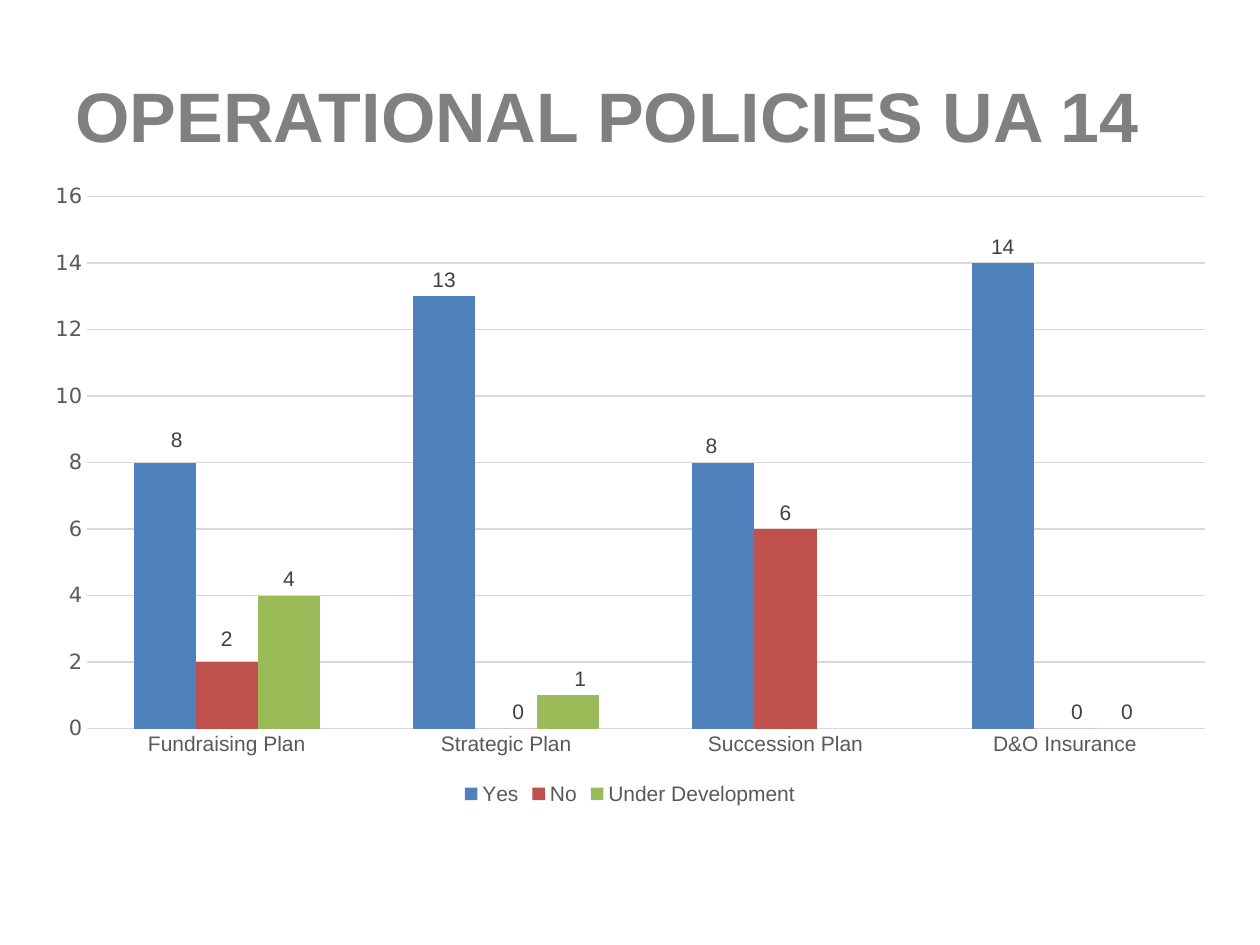
from dataclasses import dataclass

from lxml.etree import SubElement
from pptx import Presentation
from pptx.chart.data import CategoryChartData
from pptx.dml.color import RGBColor
from pptx.enum.chart import (XL_CHART_TYPE, XL_LABEL_POSITION,
                             XL_LEGEND_POSITION, XL_TICK_MARK)
from pptx.enum.text import MSO_ANCHOR, PP_ALIGN
from pptx.oxml.ns import qn
from pptx.util import Inches, Pt


@dataclass(frozen=True)
class Theme:
    face: str = "Arial"
    digits: str = "DejaVu Sans"
    head: str = "808080"
    axis: str = "595959"
    label: str = "404040"
    grid: str = "D9D9D9"
    bars: tuple = ("4F81BD", "C0504D", "9BBB59")
    big: int = 40
    small: int = 12


THEME = Theme()
PLANS = ["Fundraising Plan", "Strategic Plan", "Succession Plan", "D&O Insurance"]
ANSWERS = {
    "Yes": [8, 13, 8, 14],
    "No": [2, 0, 6, 0],
    "Under Development": [4, 1, None, 0],
}
# Label shifts as shares of the chart: (series, point) -> (x, y)
SHIFTS = {
    (0, 0): (0.01, -0.01), (0, 2): (-0.01, 0),
    (1, 0): (0, -0.01), (1, 1): (0.01, 0), (1, 3): (0.01, 0),
    (2, 1): (0.01, 0),
}


def style(font, size=THEME.small, color=THEME.axis, face=THEME.face, bold=False):
    font.size, font.name, font.bold = Pt(size), face, bold
    font.color.rgb = RGBColor.from_string(color)


def write(frame, text, align=PP_ALIGN.LEFT, anchor=MSO_ANCHOR.MIDDLE, **form):
    frame.word_wrap = True
    frame.vertical_anchor = anchor
    par = frame.paragraphs[0]
    par.alignment = align
    run = par.add_run()
    run.text = text
    style(run.font, **form)


def add_title(slide, box):
    title = slide.shapes.title
    title.left, title.top, title.width, title.height = box
    write(title.text_frame, "OPERATIONAL POLICIES UA 14",
          size=THEME.big, color=THEME.head, bold=True)


def shift_label(series, point, x, y):
    label = series.points[point].data_label
    style(label.font, color=THEME.label)
    label.position = XL_LABEL_POSITION.OUTSIDE_END
    # A manual layout has no public method
    for idx in series._element.findall(".//" + qn("c:dLbl") + "/" + qn("c:idx")):
        if idx.get("val") == str(point):
            layout = idx.makeelement(qn("c:layout"))
            manual = SubElement(layout, qn("c:manualLayout"))
            for tag, val in (("c:x", x), ("c:y", y)):
                SubElement(manual, qn(tag)).set("val", str(val))
            idx.addnext(layout)


def style_axes(chart):
    for axis, face in ((chart.category_axis, THEME.face),
                       (chart.value_axis, THEME.digits)):
        axis.major_tick_mark = axis.minor_tick_mark = XL_TICK_MARK.NONE
        axis.format.line.fill.background()
        style(axis.tick_labels.font, face=face)
    scale = chart.value_axis
    scale.minimum_scale, scale.maximum_scale, scale.major_unit = 0, 16, 2
    line = scale.major_gridlines.format.line
    line.width = Pt(0.75)
    line.color.rgb = RGBColor.from_string(THEME.grid)


def style_bars(chart):
    plot = chart.plots[0]
    plot.gap_width, plot.overlap = 150, 0
    plot.vary_by_categories = False
    for series, color in zip(plot.series, THEME.bars):
        series.format.fill.solid()
        series.format.fill.fore_color.rgb = RGBColor.from_string(color)
        series.invert_if_negative = False
        labels = series.data_labels
        labels.show_value = True
        labels.position = XL_LABEL_POSITION.OUTSIDE_END
        style(labels.font, color=THEME.label)
    for (row, point), (x, y) in SHIFTS.items():
        shift_label(plot.series[row], point, x, y)


def add_bars(slide, box):
    data = CategoryChartData()
    data.categories = PLANS
    for name, vals in ANSWERS.items():
        data.add_series(name, vals)
    chart = slide.shapes.add_chart(XL_CHART_TYPE.COLUMN_CLUSTERED, *box, data).chart
    chart.has_title = False
    style(chart.font, size=10, color="000000", face=THEME.digits)
    style_axes(chart)
    style_bars(chart)
    # Legend
    chart.has_legend = True
    chart.legend.position = XL_LEGEND_POSITION.BOTTOM
    chart.legend.include_in_layout = False
    style(chart.legend.font)


def main():
    deck = Presentation()
    deck.slide_width, deck.slide_height = Inches(10), Inches(7.5)
    slide = deck.slides.add_slide(deck.slide_layouts[5])
    add_title(slide, [Inches(n) for n in (0.5, 0.28, 9, 1.25)])
    add_bars(slide, [Inches(n) for n in (0.25, 1.36, 9.5, 5.07)])
    deck.save("out.pptx")


if __name__ == "__main__":
    main()
